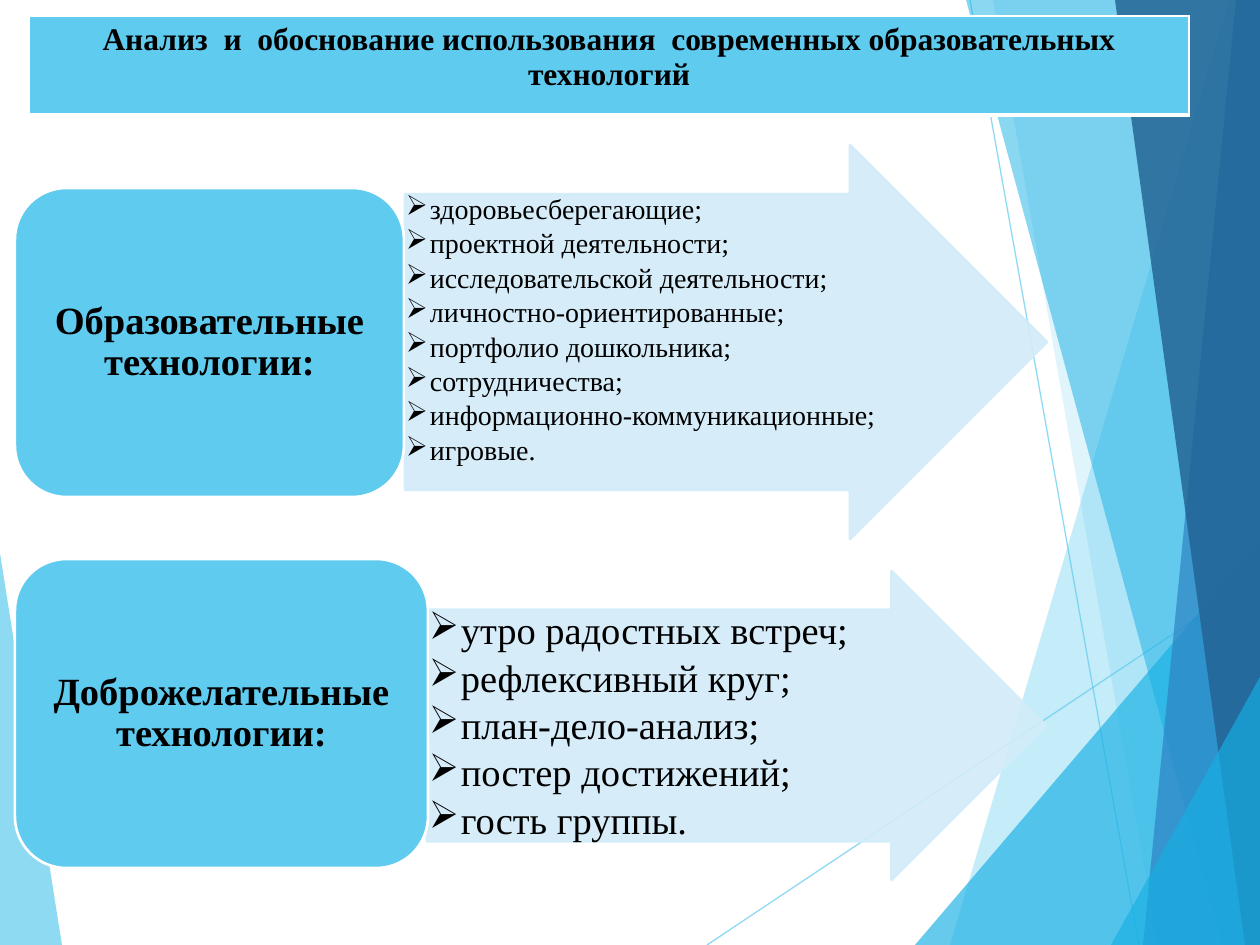
from dataclasses import dataclass

from lxml import etree
from pptx import Presentation
from pptx.dml.color import RGBColor
from pptx.enum.shapes import MSO_CONNECTOR, MSO_SHAPE
from pptx.enum.text import MSO_ANCHOR, PP_ALIGN
from pptx.oxml.ns import qn
from pptx.util import Pt

SCALE = 914400 / 126  # EMU in one px
SLIDE_W, SLIDE_H = 1260, 945
ARROW, ROUNDED = MSO_SHAPE.RIGHT_ARROW, MSO_SHAPE.ROUNDED_RECTANGLE
STRAIGHT = MSO_CONNECTOR.STRAIGHT
CENTER, LEFT = PP_ALIGN.CENTER, PP_ALIGN.LEFT
TOP, MIDDLE = MSO_ANCHOR.TOP, MSO_ANCHOR.MIDDLE


@dataclass(frozen=True)
class Theme:
    font: str = "Times New Roman"
    ink: str = "000000"
    white: str = "FFFFFF"
    sky: str = "5FCBEF"
    azure: str = "17B0E4"
    blue: str = "2E83C3"
    navy: str = "226292"
    pale: str = "D2ECF9"
    heading: int = 18
    label: int = 22
    outline: float = 1.5
    hairline: float = 0.75


THEME = Theme()

# Background facets: colour, opacity in percent, corners in px
LEFT_FACET = (THEME.sky, 70, [(0, 553), (62, 945), (0, 945)])
RIGHT_FACETS = [
    (THEME.sky, 36, [(1229, 0), (950, 945), (1260, 945), (1260, 0)]),
    (THEME.sky, 20, [(993, 0), (1158, 945), (1260, 945), (1260, 0)]),
    (THEME.azure, 66, [(915, 945), (1260, 541), (1260, 945)]),
    (THEME.azure, 50, [(966, 0), (1222, 945), (1260, 945), (1260, 0)]),
    (THEME.blue, 70, [(1236, 0), (1143, 945), (1260, 945), (1260, 0)]),
    (THEME.navy, 82, [(1115, 0), (1245, 945), (1260, 945), (1260, 0)]),
    (THEME.azure, 66, [(1111, 945), (1260, 677), (1260, 945)]),
]
RAYS = [(707, 945, 1260, 576), (970, 0, 1139, 945)]

HEADING = "Анализ  и  обоснование использования  современных образовательных технологий"

# Each row: label and its box, list and its arrow box, text size, indent, inset
ROWS = [
    dict(label="Образовательные технологии:", label_box=(15, 188, 389, 309),
         items=["здоровьесберегающие;", "проектной деятельности;",
                "исследовательской деятельности;", "личностно-ориентированные;",
                "портфолио дошкольника;", "сотрудничества;",
                "информационно-коммуникационные;", "игровые."],
         arrow_box=(405, 145, 642, 394), size=16, indent=24, inset=1),
    dict(label="Доброжелательные технологии:", label_box=(15, 559, 413, 309),
         items=["утро радостных встреч;", "рефлексивный круг;",
                "план-дело-анализ;", "постер достижений;", "гость группы."],
         arrow_box=(427, 571, 619, 309), size=22, indent=32, inset=2),
]


def px(value):
    return round(value * SCALE)


def rgb(color):
    return RGBColor.from_string(color)


def apply(target, values):
    for name, value in values.items():
        setattr(target, name, value)


def set_opacity(shape, percent):
    for color in shape._element.spPr.iter(qn("a:srgbClr")):
        etree.SubElement(color, qn("a:alpha"), val=str(percent * 1000))


def paint(shape, fill, line=None, width=0):
    shape.shadow.inherit = False
    shape.fill.solid()
    shape.fill.fore_color.rgb = rgb(fill)
    if line:
        shape.line.color.rgb = rgb(line)
        shape.line.width = Pt(width)
    else:
        shape.line.fill.background()


def write(paragraph, text, size, bold=False, align=CENTER, spacing=None, after=0):
    apply(paragraph, dict(alignment=align, line_spacing=spacing))
    if after:
        space = etree.SubElement(paragraph._p.get_or_add_pPr(), qn("a:spcAft"))
        etree.SubElement(space, qn("a:spcPct"), val=str(after * 1000))
    run = paragraph.add_run()
    run.text = text
    apply(run.font, dict(name=THEME.font, size=Pt(size), bold=bold))
    run.font.color.rgb = rgb(THEME.ink)


def set_frame(shape, anchor, side, edge):
    apply(shape.text_frame, dict(
        word_wrap=True, vertical_anchor=anchor,
        margin_left=px(side), margin_right=px(side),
        margin_top=px(edge), margin_bottom=px(edge)))


def add_facet(slide, color, opacity, corners):
    builder = slide.shapes.build_freeform(*corners[0], scale=SCALE)
    builder.add_line_segments(corners[1:], close=True)
    facet = builder.convert_to_shape()
    paint(facet, color)
    set_opacity(facet, opacity)


def add_background(slide):
    add_facet(slide, *LEFT_FACET)
    for ends in RAYS:
        ray = slide.shapes.add_connector(STRAIGHT, *map(px, ends))
        ray.line.color.rgb = rgb(THEME.sky)
        ray.line.width = Pt(THEME.hairline)
        set_opacity(ray, 70)
        etree.SubElement(ray._element.spPr, qn("a:effectLst"))
    for facet in RIGHT_FACETS:
        add_facet(slide, *facet)


def add_heading(slide, box):
    table = slide.shapes.add_table(1, 1, *map(px, box)).table
    cell = table.cell(0, 0)
    cell.fill.solid()
    cell.fill.fore_color.rgb = rgb(THEME.sky)
    write(cell.text_frame.paragraphs[0], HEADING, THEME.heading, bold=True)
    # White borders, thicker below
    for place, (side, points) in enumerate(dict(L=1, R=1, T=1, B=3).items()):
        border = etree.Element(qn(f"a:ln{side}"), w=str(Pt(points)))
        fill = etree.SubElement(border, qn("a:solidFill"))
        etree.SubElement(fill, qn("a:srgbClr"), val=THEME.white)
        cell._tc.get_or_add_tcPr().insert(place, border)


def add_arrow_list(slide, box, items, size, indent, inset):
    arrow = slide.shapes.add_shape(ARROW, *map(px, box))
    arrow.adjustments[0], arrow.adjustments[1] = 0.75, 0.5
    paint(arrow, THEME.pale, THEME.pale, THEME.outline)
    set_opacity(arrow, 90)
    set_frame(arrow, TOP, inset, inset)
    frame = arrow.text_frame
    for index, item in enumerate(items):
        paragraph = frame.add_paragraph() if index else frame.paragraphs[0]
        paragraph.level = 1
        write(paragraph, item, size, align=LEFT, spacing=0.9, after=15)
        properties = paragraph._p.get_or_add_pPr()
        properties.set("marL", str(px(indent)))
        properties.set("indent", str(-px(indent)))
        etree.SubElement(properties, qn("a:buChar"), char="➢")


def add_label(slide, box, text):
    label = slide.shapes.add_shape(ROUNDED, *map(px, box))
    paint(label, THEME.sky, THEME.white, THEME.outline)
    set_frame(label, MIDDLE, 11, 6)
    write(label.text_frame.paragraphs[0], text, THEME.label, bold=True,
          spacing=0.9, after=35)


def add_row(slide, label, label_box, items, arrow_box, size, indent, inset):
    add_arrow_list(slide, arrow_box, items, size, indent, inset)
    add_label(slide, label_box, label)


def main():
    deck = Presentation()
    apply(deck, dict(slide_width=px(SLIDE_W), slide_height=px(SLIDE_H)))
    slide = deck.slides.add_slide(deck.slide_layouts[6])
    add_background(slide)
    add_heading(slide, (29, 16, 1160, 99))
    for row in ROWS:
        add_row(slide, **row)
    deck.save("out.pptx")


if __name__ == "__main__":
    main()
